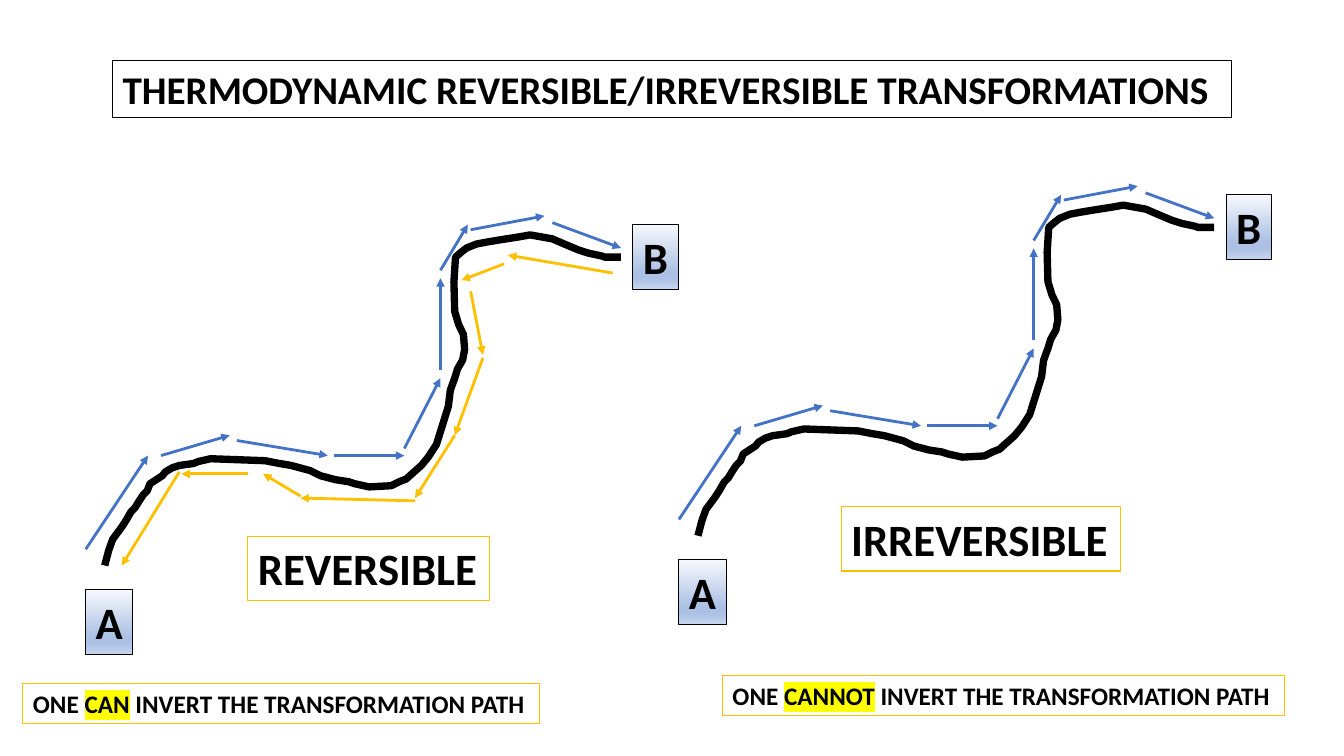
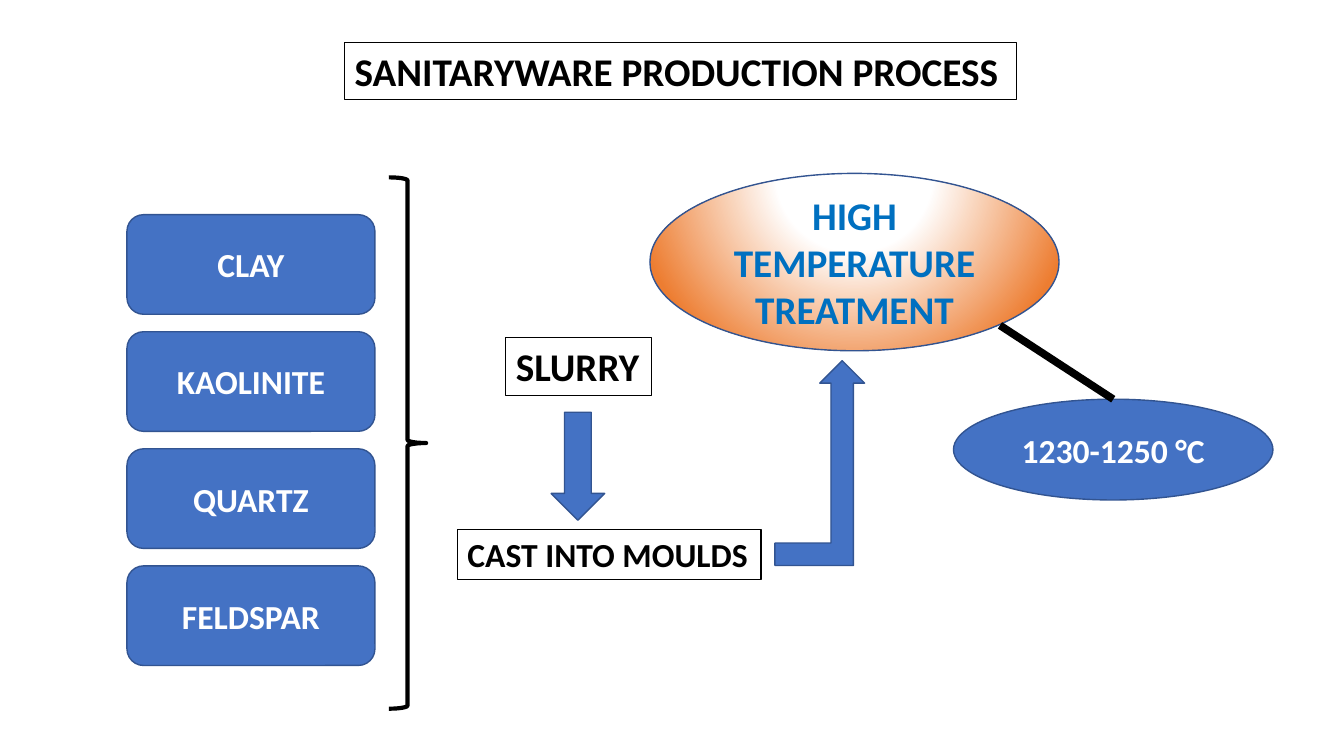
from lxml import etree
from pptx import Presentation
from pptx.dml.color import RGBColor
from pptx.enum.shapes import MSO_CONNECTOR, MSO_SHAPE
from pptx.enum.text import MSO_ANCHOR, PP_ALIGN
from pptx.oxml.ns import qn
from pptx.util import Cm, Pt

STRAIGHT = MSO_CONNECTOR.STRAIGHT
ROUNDED = MSO_SHAPE.ROUNDED_RECTANGLE
ELLIPSE = MSO_SHAPE.OVAL
BRACE = MSO_SHAPE.RIGHT_BRACE
DOWN_ARROW = MSO_SHAPE.DOWN_ARROW
BENT_ARROW = MSO_SHAPE.BENT_UP_ARROW
RECTANGLE = MSO_SHAPE.RECTANGLE
TOP, MIDDLE = MSO_ANCHOR.TOP, MSO_ANCHOR.MIDDLE
LEFT, CENTER = PP_ALIGN.LEFT, PP_ALIGN.CENTER

BLACK = RGBColor(0x00, 0x00, 0x00)
WHITE = RGBColor(0xFF, 0xFF, 0xFF)
BLUE = RGBColor(0x44, 0x72, 0xC4)
DARK_BLUE = RGBColor(0x32, 0x54, 0x91)
TEXT_BLUE = RGBColor(0x00, 0x70, 0xC0)
GOLD = RGBColor(0xFF, 0xC0, 0x00)
ORANGE = RGBColor(0xED, 0x7D, 0x31)
YELLOW = RGBColor(0xFF, 0xFF, 0x00)
PALE_BLUE = RGBColor(0xF6, 0xF8, 0xFC)
SOFT_BLUE = RGBColor(0xAB, 0xC0, 0xE4)
LIGHT_BLUE = RGBColor(0xC7, 0xD5, 0xED)

FONT = "Calibri"
STATE_STOPS = [(0, PALE_BLUE), (74, SOFT_BLUE), (83, SOFT_BLUE), (100, LIGHT_BLUE)]
HEAT_STOPS = [(0, WHITE), (35, WHITE), (100, ORANGE)]
HEAT_CENTRE = {"l": "50000", "t": "-80000", "r": "50000", "b": "180000"}

PATH = [
    (2.64, 14.25), (2.74, 13.87), (2.84, 13.59), (3.07, 13.28), (3.18, 13.11),
    (3.3, 12.9), (3.4, 12.8), (3.51, 12.62), (3.61, 12.47), (3.71, 12.37),
    (3.78, 12.19), (4.09, 11.99), (4.17, 11.89), (4.34, 11.79), (4.52, 11.73),
    (4.88, 11.68), (5, 11.63), (5.31, 11.56), (6.68, 11.61), (7.04, 11.68),
    (7.34, 11.73), (7.82, 11.86), (8.08, 11.99), (8.46, 12.09), (8.79, 12.14),
    (8.94, 12.19), (9.3, 12.27), (9.86, 12.24), (10.06, 12.14), (10.24, 12.07),
    (10.36, 11.96), (10.62, 11.73), (10.8, 11.51), (11, 11.2), (11.15, 10.72),
    (11.3, 10.24), (11.35, 9.83), (11.46, 9.53), (11.53, 9.3), (11.66, 9.07),
    (11.71, 8.81), (11.68, 8.43), (11.56, 8.18), (11.46, 7.85), (11.44, 7.11),
    (11.48, 6.48), (11.63, 6.35), (11.76, 6.25), (12.01, 6.15), (12.27, 6.1),
    (12.57, 6.05), (13.08, 5.97), (13.36, 5.92), (13.92, 6.02), (14.27, 6.17),
    (14.58, 6.3), (14.83, 6.38), (15.16, 6.45), (15.24, 6.48), (15.65, 6.48),
]
FORWARD_STEPS = [
    (2.16, 13.84, 3.73, 11.48), (4.06, 11.48, 5.79, 10.97),
    (5.97, 11.1, 8.26, 11.48), (8.41, 11.48, 10.19, 11.48),
    (10.19, 11.3, 11.1, 9.53), (11.1, 9.32, 11.1, 7.01),
    (11.1, 6.81, 11.79, 5.66), (11.86, 5.79, 13.72, 5.44),
    (13.92, 5.61, 15.65, 6.25),
]
RETURN_STEPS = [
    (15.44, 6.88, 12.8, 6.43), (12.7, 6.65, 11.63, 7.06),
    (11.86, 7.34, 12.17, 8.94), (12.17, 9.02, 11.46, 10.97),
    (11.46, 10.97, 10.46, 12.55), (10.46, 12.62, 7.57, 12.55),
    (7.57, 12.5, 6.63, 11.94), (6.25, 11.94, 4.57, 11.94),
    (4.52, 11.89, 3.07, 14.25),
]


def style_line(line, color, width):
    line.color.rgb = color
    line.width = Pt(width)


def style_run(run, size, color):
    run.font.name = FONT
    run.font.size = Pt(size)
    run.font.bold = True
    run.font.color.rgb = color


def highlight_run(run):
    highlight = etree.Element(qn("a:highlight"))
    etree.SubElement(highlight, qn("a:srgbClr"), val=str(YELLOW))
    run.font._element.find(qn("a:solidFill")).addnext(highlight)


def fill_gradient(shape, stops, centre=None):
    shape.fill.gradient()
    gradient = shape._element.spPr.find(qn("a:gradFill"))
    for child in list(gradient):
        gradient.remove(child)
    stop_list = etree.SubElement(gradient, qn("a:gsLst"))
    for percent, color in stops:
        stop = etree.SubElement(stop_list, qn("a:gs"), pos=str(percent * 1000))
        etree.SubElement(stop, qn("a:srgbClr"), val=str(color))
    if centre:
        radial = etree.SubElement(gradient, qn("a:path"), path="circle")
        etree.SubElement(radial, qn("a:fillToRect"), **centre)
    else:
        etree.SubElement(gradient, qn("a:lin"), ang="5400000", scaled="0")


def add_label(slide, text, box, size, border=BLACK, marked=None):
    label = slide.shapes.add_shape(RECTANGLE, *map(Cm, box))
    label.shadow.inherit = False
    label.fill.background()
    style_line(label.line, border, 0.75)
    frame = label.text_frame
    frame.word_wrap = True
    frame.vertical_anchor = TOP
    paragraph = frame.paragraphs[0]
    paragraph.alignment = LEFT
    before, mark, after = text.partition(marked) if marked else (text, "", "")
    for part in filter(None, (before, mark, after)):
        run = paragraph.add_run()
        run.text = part
        style_run(run, size, BLACK)
        if part == marked:
            highlight_run(run)
    return label


def add_title(slide, text, left, top, width):
    add_label(slide, text, (left, top, width, 1.45), 28)


def add_block(slide, kind, box, text="", size=24, color=WHITE):
    block = slide.shapes.add_shape(kind, *map(Cm, box))
    block.shadow.inherit = False
    block.fill.solid()
    block.fill.fore_color.rgb = BLUE
    style_line(block.line, DARK_BLUE, 1)
    if text:
        frame = block.text_frame
        frame.text = text
        frame.word_wrap = True
        frame.vertical_anchor = MIDDLE
        paragraph = frame.paragraphs[0]
        paragraph.alignment = CENTER
        style_run(paragraph.runs[0], size, color)
    return block


def add_line(slide, ends, color, width, arrow=False):
    connector = slide.shapes.add_connector(STRAIGHT, *map(Cm, ends))
    style_line(connector.line, color, width)
    if arrow:
        outline = connector.line._get_or_add_ln()
        etree.SubElement(outline, qn("a:tailEnd"), type="triangle")
    etree.SubElement(connector._element.spPr, qn("a:effectLst"))
    return connector


def add_path(slide, dx, dy):
    points = [(Cm(x), Cm(y)) for x, y in PATH]
    builder = slide.shapes.build_freeform(*points[0])
    builder.add_line_segments(points[1:], close=False)
    curve = builder.convert_to_shape(Cm(dx), Cm(dy))
    curve.shadow.inherit = False
    curve.fill.background()
    style_line(curve.line, BLACK, 5.25)


def add_transformation(slide, name, name_width, step_sets, dx=0, dy=0):
    add_path(slide, dx, dy)
    for state, left, top, width in [("A", 2.16, 14.86, 1.19), ("B", 15.95, 5.66, 1.14)]:
        box = add_label(slide, state, (left + dx, top + dy, width, 1.63), 32)
        fill_gradient(box, STATE_STOPS)
    for steps, color in step_sets:
        for x1, y1, x2, y2 in steps:
            add_line(slide, (x1 + dx, y1 + dy, x2 + dx, y2 + dy), color, 2, arrow=True)
    add_label(slide, name, (6.25 + dx, 13.51 + dy, name_width, 1.63), 32, GOLD)


def build_transformations(slide):
    add_title(slide, "THERMODYNAMIC REVERSIBLE/IRREVERSIBLE TRANSFORMATIONS", 2.84, 1.52, 28.19)
    forward = (FORWARD_STEPS, BLUE)
    add_transformation(slide, "REVERSIBLE", 6.1, [forward, (RETURN_STEPS, GOLD)])
    add_transformation(slide, "IRREVERSIBLE", 7.04, [forward], 14.95, -0.75)
    for ability, left, top, width in [("CAN", 0.58, 17.22, 13.03), ("CANNOT", 18.21, 17.02, 14.17)]:
        caption = f"ONE {ability} INVERT THE TRANSFORMATION PATH"
        add_label(slide, caption, (left, top, width, 1.02), 18, GOLD, ability)


def build_process(slide):
    add_title(slide, "SANITARYWARE PRODUCTION PROCESS", 8.69, 1.07, 16.92)
    for row, material in enumerate(["CLAY", "KAOLINITE", "QUARTZ", "FELDSPAR"]):
        add_block(slide, ROUNDED, (3.2, 5.41 + row * 2.95, 6.25, 2.51), material)
    brace = add_block(slide, BRACE, (9.8, 4.47, 0.94, 13.39))
    brace.fill.background()
    style_line(brace.line, BLACK, 3)
    add_label(slide, "SLURRY", (12.75, 8.51, 3.66, 1.45), 28)
    add_label(slide, "CAST INTO MOULDS", (11.53, 13.34, 7.65, 1.27), 24)
    add_block(slide, DOWN_ARROW, (13.89, 10.39, 1.35, 2.72))
    add_block(slide, BENT_ARROW, (19.53, 9.09, 2.26, 5.16))
    treatment = add_block(slide, ELLIPSE, (16.38, 4.37, 10.31, 4.47),
                          "HIGH TEMPERATURE TREATMENT", 28, TEXT_BLUE)
    fill_gradient(treatment, HEAT_STOPS, HEAT_CENTRE)
    temperature = add_block(slide, ELLIPSE, (24.03, 10.06, 8.05, 2.54), "1230-1250 °C")
    link = add_line(slide, (25.2, 8.2, 28.06, 10.06), BLACK, 5.5)
    link.end_connect(temperature, 0)


def main():
    deck = Presentation()
    deck.slide_width, deck.slide_height = Cm(33.87), Cm(19.05)
    for build in (build_transformations, build_process):
        build(deck.slides.add_slide(deck.slide_layouts[6]))
    deck.save("out.pptx")


if __name__ == "__main__":
    main()
